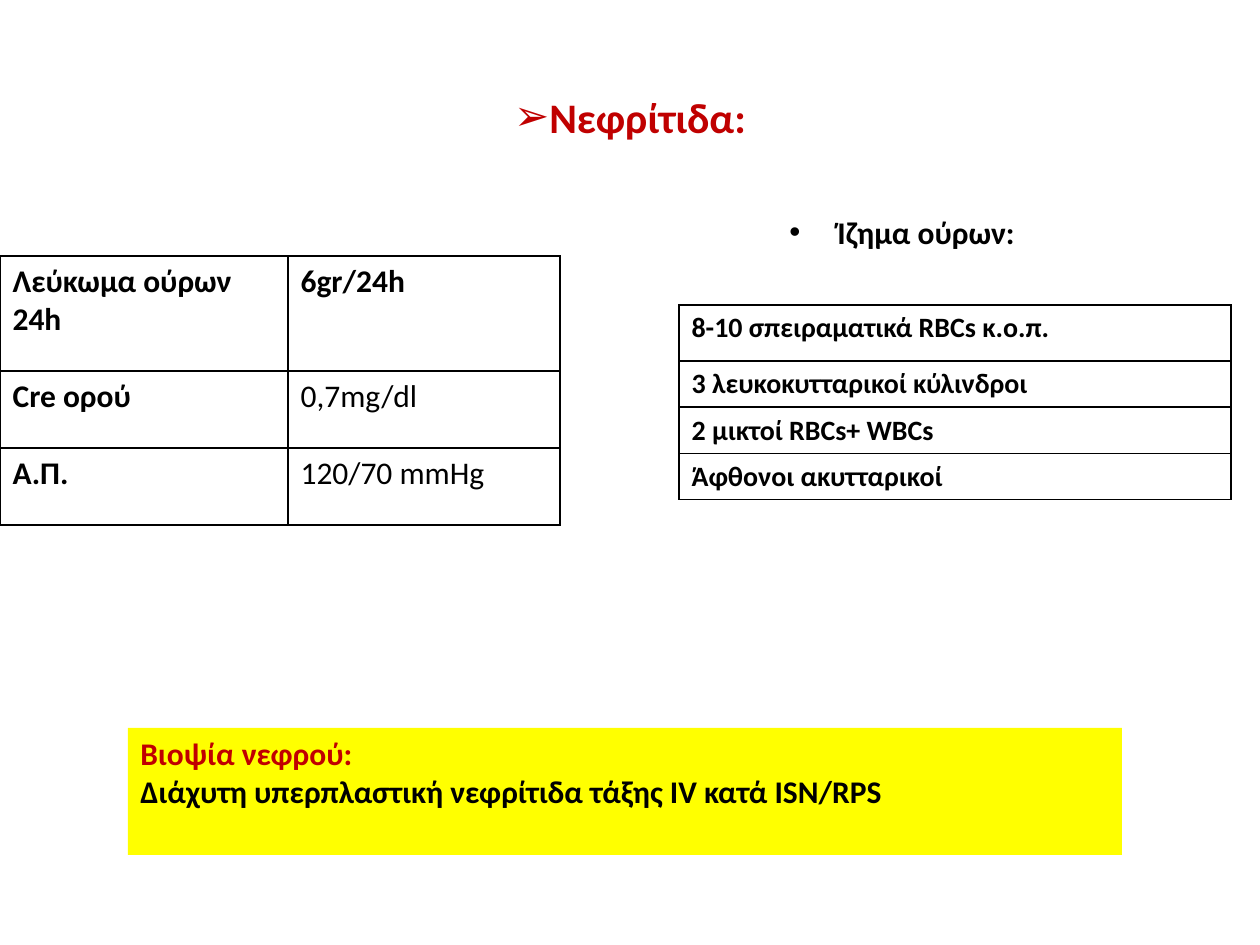
from pptx import Presentation
from pptx.dml.color import RGBColor
from pptx.enum.shapes import MSO_SHAPE as Shape
from pptx.enum.text import MSO_ANCHOR as Anchor, PP_ALIGN as Align
from pptx.oxml import parse_xml
from pptx.oxml.ns import nsdecls
from pptx.util import Emu, Pt

COLORS = {"black": "000000", "red": "C00000", "yellow": "FFFF00"}
PX_PER_INCH = 126


def px(n):
    return Emu(round(n * 914400 / PX_PER_INCH))


def rgb(name):
    return RGBColor.from_string(COLORS[name])


class Deck:
    font = "Calibri"

    def __init__(self, width, height):
        self.prs = Presentation()
        self.prs.slide_width, self.prs.slide_height = px(width), px(height)
        self.s = self.prs.slides.add_slide(self.prs.slide_layouts[5])

    def run(self, p, text, size, color="black", bold=True):
        r = p.add_run()
        r.text = text
        values = {"name": self.font, "size": Pt(size), "bold": bold}
        for key, value in values.items():
            setattr(r.font, key, value)
        r.font.color.rgb = rgb(color)

    def bullet(self, p, char, indent=0):
        pPr = p._p.get_or_add_pPr()
        pPr.set("marL", str(px(indent)))
        pPr.set("indent", str(-px(indent)))
        pPr.append(parse_xml(f'<a:buFont {nsdecls("a")} typeface="Arial"/>'))
        pPr.append(parse_xml(f'<a:buChar {nsdecls("a")} char="{char}"/>'))

    def title(self, text, x, y, w, h):
        sp = self.s.shapes.title
        box = {"left": x, "top": y, "width": w, "height": h}
        for key, value in box.items():
            setattr(sp, key, px(value))
        sp.text_frame.vertical_anchor = Anchor.MIDDLE
        p = sp.text_frame.paragraphs[0]
        p.alignment = Align.CENTER
        self.bullet(p, "➢")
        self.run(p, text, 24, "red")

    def bullet_text(self, text, x, y, w, h):
        tf = self.s.shapes.add_textbox(px(x), px(y), px(w), px(h)).text_frame
        tf.word_wrap = True
        p = tf.paragraphs[0]
        self.bullet(p, "•", 48)
        self.run(p, text, 18)

    def borders(self, cell):
        tcPr = cell._tc.get_or_add_tcPr()
        for i, side in enumerate("LRTB"):
            tcPr.insert(i, parse_xml(
                f'<a:ln{side} {nsdecls("a")} w="12700"><a:solidFill>'
                f'<a:srgbClr val="{COLORS["black"]}"/></a:solidFill></a:ln{side}>'))

    def table(self, rows, x, y, widths, heights, size):
        frame = self.s.shapes.add_table(len(rows), len(widths), px(x), px(y),
                                        px(sum(widths)), px(sum(heights)))
        table = frame.table
        table.first_row = table.horz_banding = False
        for column, width in zip(table.columns, widths):
            column.width = px(width)
        for i, (row, height) in enumerate(zip(rows, heights)):
            table.rows[i].height = px(height)
            for j, (text, bold) in enumerate(row):
                cell = table.cell(i, j)
                cell.fill.background()
                self.borders(cell)
                self.run(cell.text_frame.paragraphs[0], text, size, bold=bold)

    def panel(self, lines, x, y, w, h, fill):
        sp = self.s.shapes.add_shape(Shape.RECTANGLE, px(x), px(y), px(w), px(h))
        sp.shadow.inherit = False
        sp.fill.solid()
        sp.fill.fore_color.rgb = rgb(fill)
        sp.line.fill.background()
        tf = sp.text_frame
        tf.word_wrap = True
        tf.vertical_anchor = Anchor.TOP
        p = tf.paragraphs[0]
        p.alignment = Align.LEFT
        for i, (text, color) in enumerate(lines):
            if i:
                p.add_line_break()
            self.run(p, text, 18, color)


def main():
    deck = Deck(1260, 945)
    deck.title("Νεφρίτιδα:", 63, 38, 1134, 157)
    deck.bullet_text("Ίζημα ούρων:", 777, 207, 298, 50)
    deck.table([[("Λεύκωμα ούρων 24h", True), ("6gr/24h", True)],
                [("Cre ορού", True), ("0,7mg/dl", False)],
                [("Α.Π.", True), ("120/70 mmHg", False)]],
               0, 256, [288, 272], [115, 77, 77], 18)
    sediment = ["8-10 σπειραματικά RBCs κ.ο.π.", "3 λευκοκυτταρικοί κύλινδροι",
                "2 μικτοί RBCs+ WBCs", "Άφθονοι ακυτταρικοί"]
    deck.table([[(text, True)] for text in sediment],
               679, 305, [552], [56, 46, 46, 46], 16)
    deck.panel([("Βιοψία νεφρού:", "red"),
                ("Διάχυτη υπερπλαστική νεφρίτιδα τάξης IV κατά ISN/RPS", "black")],
               128, 728, 994, 127, "yellow")
    deck.prs.save("out.pptx")


if __name__ == "__main__":
    main()
